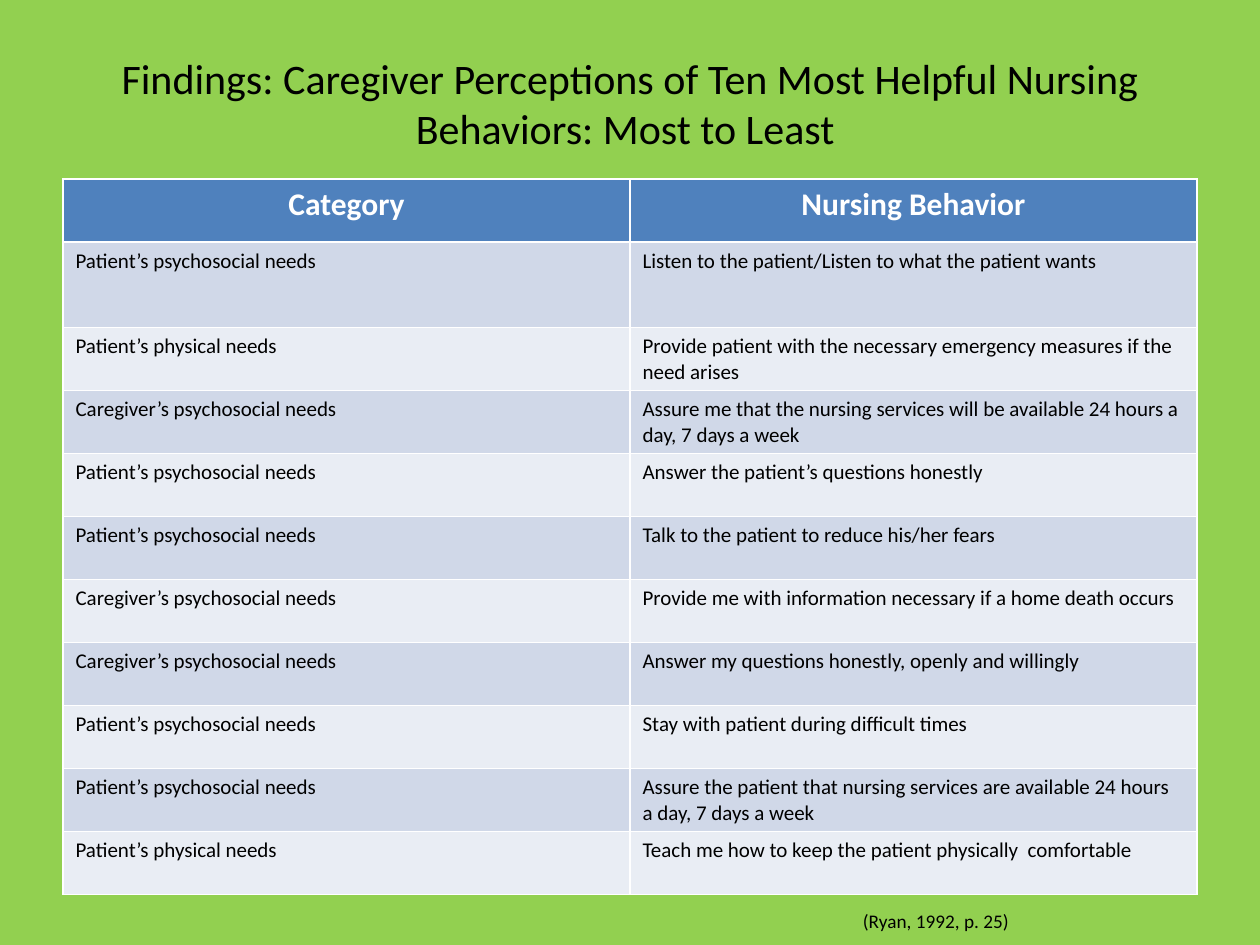
"""Build a slide with a table of the nursing behaviors caregivers find most helpful."""
from pptx import Presentation
from pptx.dml.color import RGBColor
from pptx.enum.text import MSO_ANCHOR, PP_ALIGN
from pptx.util import Inches, Pt

CENTER, LEFT = PP_ALIGN.CENTER, PP_ALIGN.LEFT
MIDDLE = MSO_ANCHOR.MIDDLE
FONT = "Calibri"
COLORS = {
    "background": "92D050",
    "header": "4F81BD",
    "odd_row": "D0D8E8",
    "even_row": "E9EDF4",
    "text": "000000",
    "header_text": "FFFFFF",
}
PATIENT_MIND = "Patient’s psychosocial needs"
PATIENT_BODY = "Patient’s physical needs"
CAREGIVER_MIND = "Caregiver’s psychosocial needs"
FINDINGS = [
    ("Category", "Nursing Behavior"),
    (PATIENT_MIND, "Listen to the patient/Listen to what the patient wants"),
    (PATIENT_BODY, "Provide patient with the necessary emergency measures if the need arises"),
    (CAREGIVER_MIND, "Assure me that the nursing services will be available 24 hours a day, 7 days a week"),
    (PATIENT_MIND, "Answer the patient’s questions honestly"),
    (PATIENT_MIND, "Talk to the patient to reduce his/her fears"),
    (CAREGIVER_MIND, "Provide me with information necessary if a home death occurs"),
    (CAREGIVER_MIND, "Answer my questions honestly, openly and willingly"),
    (PATIENT_MIND, "Stay with patient during difficult times"),
    (PATIENT_MIND, "Assure the patient that nursing services are available 24 hours a day, 7 days a week"),
    (PATIENT_BODY, "Teach me how to keep the patient physically  comfortable"),
]


def write(frame, text, size, color="text", align=LEFT, bold=False):
    frame.word_wrap = True
    paragraph = frame.paragraphs[0]
    paragraph.text = text
    paragraph.alignment = align
    paragraph.font.name = FONT
    paragraph.font.size = Pt(size)
    paragraph.font.bold = bold
    paragraph.font.color.rgb = RGBColor.from_string(COLORS[color])


prs = Presentation()
prs.slide_width, prs.slide_height = Inches(10), Inches(7.5)
slide = prs.slides.add_slide(prs.slide_layouts[6])
slide.background.fill.solid()
slide.background.fill.fore_color.rgb = RGBColor.from_string(COLORS["background"])

title = slide.shapes.add_textbox(Inches(0.5), Inches(0.3), Inches(9), Inches(1.03)).text_frame
title.vertical_anchor = MIDDLE
write(title, "Findings: Caregiver Perceptions of Ten Most Helpful Nursing Behaviors: Most to Least ",
      24, align=CENTER)

findings = slide.shapes.add_table(
    len(FINDINGS), 2, Inches(0.5), Inches(1.42), Inches(9), Inches(5.68)).table
for number, entry in enumerate(FINDINGS):
    findings.rows[number].height = Inches(0.68 if number == 1 else 0.5)
    for column, text in enumerate(entry):
        cell = findings.cell(number, column)
        if number == 0:
            band = "header"
            write(cell.text_frame, text, 18, "header_text", CENTER, bold=True)
        else:
            band = "odd_row" if number % 2 else "even_row"
            write(cell.text_frame, text, 12)
        cell.fill.solid()
        cell.fill.fore_color.rgb = RGBColor.from_string(COLORS[band])

citation = slide.shapes.add_textbox(Inches(6.75), Inches(7.17), Inches(2.92), Inches(0.29)).text_frame
write(citation, "(Ryan, 1992, p. 25)", 11)

prs.save("out.pptx")
